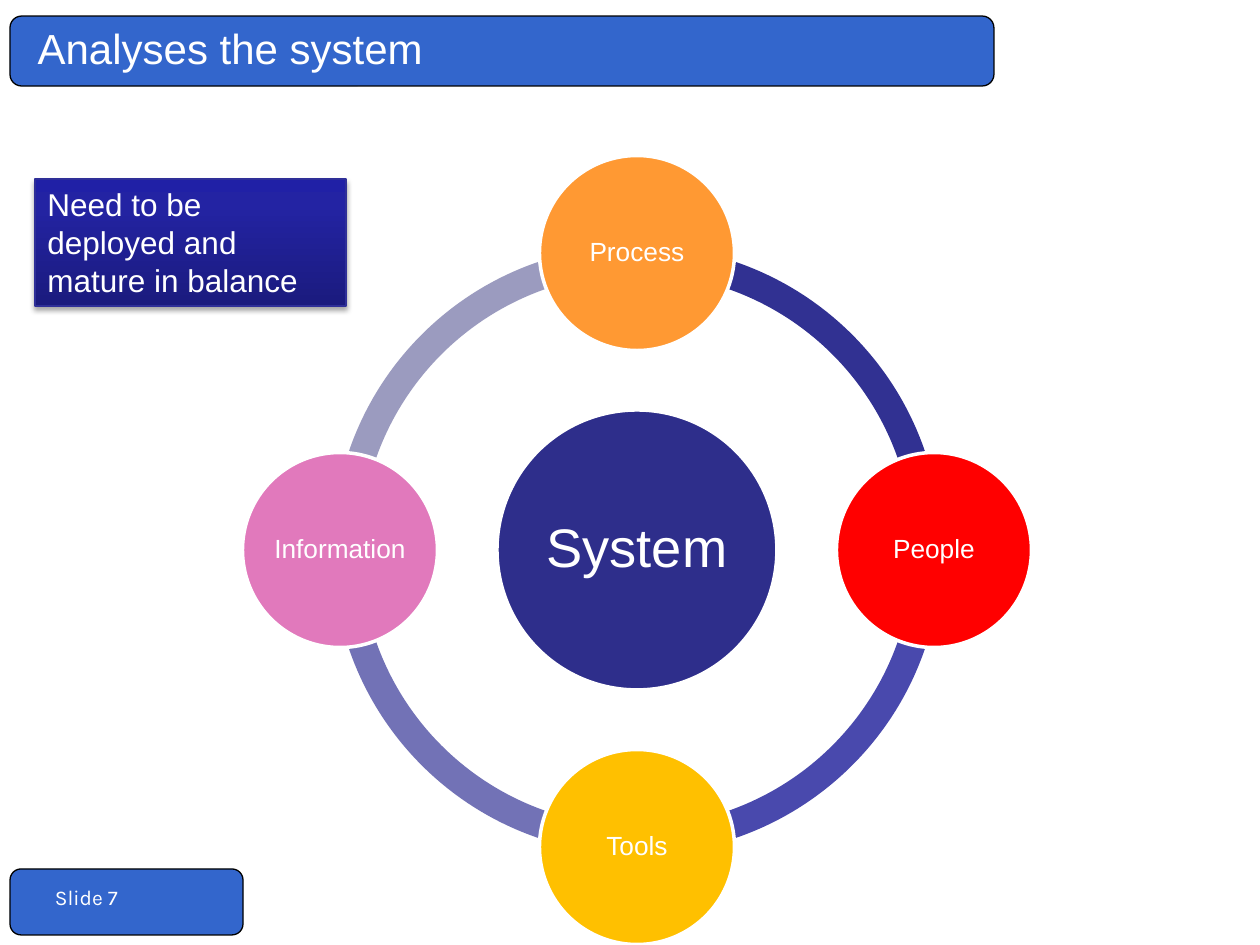
from copy import deepcopy

from lxml.etree import SubElement
from pptx import Presentation
from pptx.dml.color import RGBColor
from pptx.enum.shapes import MSO_SHAPE
from pptx.enum.text import MSO_ANCHOR, PP_ALIGN
from pptx.oxml.ns import qn
from pptx.util import Emu, Pt

EMU_PER_PX = 914400 // 126
WHITE, BAR_BLUE = "FFFFFF", "3366CC"
CENTRE_X, CENTRE_Y = 637, 550
ORBIT, RING_SIZE, NODE_SIZE, HUB_SIZE = 297, 609, 195, 280

# Label, colour, direction from the hub
NODES = [
    ("Process", "FF9933", (0, -1)),
    ("People", "FF0000", (1, 0)),
    ("Tools", "FFC000", (0, 1)),
    ("Information", "E179BC", (-1, 0)),
]
# Colour, start and end angle in degrees
ARCS = [
    ("9B9BBF", 180, 270),
    ("7272B6", 90, 180),
    ("4949AD", 0, 90),
    ("313192", 270, 0),
]


def px(n):
    return Emu(round(n * EMU_PER_PX))


def rgb(value):
    return RGBColor.from_string(value)


def add_run(p, text, size, font="Arial"):
    r = p.add_run()
    r.text = text
    r.font.size = Pt(size)
    r.font.name = font
    r.font.color.rgb = rgb(WHITE)


def add_box(s, kind, left, top, width, height, fill=None, line=None, weight=0.75):
    sp = s.shapes.add_shape(kind, px(left), px(top), px(width), px(height))
    sp.shadow.inherit = False
    if fill:
        sp.fill.solid()
        sp.fill.fore_color.rgb = rgb(fill)
    if line:
        sp.line.color.rgb = rgb(line)
        sp.line.width = Pt(weight)
    else:
        sp.line.fill.background()
    return sp


def add_title(s, text):
    title = s.shapes.title
    title.left, title.top, title.width, title.height = px(25), px(0), px(960), px(96)
    tf = title.text_frame
    tf.vertical_anchor = MSO_ANCHOR.MIDDLE
    p = tf.paragraphs[0]
    p.alignment = PP_ALIGN.LEFT
    add_run(p, text, 24)


def add_footer(s, text):
    box = s.shapes.add_textbox(px(0), px(869), px(174), px(47))
    tf = box.text_frame
    tf.word_wrap = True
    tf.margin_left = px(55)
    tf.vertical_anchor = MSO_ANCHOR.BOTTOM
    add_run(tf.paragraphs[0], text, 12, "Karla")


def add_arc(s, colour, start, end):
    half = RING_SIZE / 2
    sp = add_box(s, MSO_SHAPE.BLOCK_ARC, CENTRE_X - half, CENTRE_Y - half,
                 RING_SIZE, RING_SIZE, colour)
    # Angles count 60000ths of a degree, adjustments 100000ths
    for i, value in enumerate((start * 0.6, end * 0.6, 0.046)):
        sp.adjustments[i] = value


def add_circle(s, text, x, y, diameter, colour, size):
    """Draw a labelled circle centred on x, y."""
    sp = add_box(s, MSO_SHAPE.OVAL, x - diameter / 2, y - diameter / 2,
                 diameter, diameter, colour, WHITE, 2)
    tf = sp.text_frame
    tf.word_wrap = False
    tf.margin_left = tf.margin_right = tf.margin_top = tf.margin_bottom = px(3)
    tf.vertical_anchor = MSO_ANCHOR.MIDDLE
    p = tf.paragraphs[0]
    p.alignment = PP_ALIGN.CENTER
    p.line_spacing = 0.9
    add_run(p, text, size)


def fill_gradient(sp, stops, angle):
    sp.fill.gradient()
    sp.fill.gradient_angle = angle
    gs_list = next(sp.element.iter(qn("a:gsLst")))
    while len(gs_list) < len(stops):
        gs_list.append(deepcopy(gs_list[0]))
    for stop, (position, colour) in zip(sp.fill.gradient_stops, stops):
        stop.position = position
        stop.color.rgb = rgb(colour)


def add_drop_shadow(sp, blur, distance, opacity):
    effects = next(sp.element.iter(qn("a:effectLst")))
    shadow = SubElement(effects, qn("a:outerShdw"), blurRad=str(Pt(blur)),
                        dist=str(Pt(distance)), dir="5400000", rotWithShape="0")
    colour = SubElement(shadow, qn("a:srgbClr"), val="000000")
    SubElement(colour, qn("a:alpha"), val=str(opacity * 1000))


def add_callout(s, text):
    sp = add_box(s, MSO_SHAPE.RECTANGLE, 35, 179, 311, 127, line="2F2F98")
    fill_gradient(sp, [(0, "1B1B7E"), (0.8, "2323A3"), (1, "2020A6")], 90)
    add_drop_shadow(sp, 3.1, 1.8, 35)
    tf = sp.text_frame
    tf.word_wrap = True
    tf.vertical_anchor = MSO_ANCHOR.TOP
    p = tf.paragraphs[0]
    p.alignment = PP_ALIGN.LEFT
    add_run(p, text, 18)


def main():
    prs = Presentation()
    prs.slide_width, prs.slide_height = px(1260), px(945)
    s = prs.slides.add_slide(prs.slide_layouts[5])

    title_bar = add_box(s, MSO_SHAPE.ROUNDED_RECTANGLE, 10, 16, 984, 70, BAR_BLUE, "000000")
    s.shapes.title.element.addprevious(title_bar.element)
    add_title(s, "Analyses the system")
    add_box(s, MSO_SHAPE.ROUNDED_RECTANGLE, 10, 869, 233, 66, BAR_BLUE, "000000")
    add_footer(s, "Slide 7")

    for arc in ARCS:
        add_arc(s, *arc)
    add_circle(s, "System", CENTRE_X, CENTRE_Y, HUB_SIZE, "2E2E8B", 31)
    for label, colour, (dx, dy) in NODES:
        add_circle(s, label, CENTRE_X + dx * ORBIT, CENTRE_Y + dy * ORBIT,
                   NODE_SIZE, colour, 15)
    add_callout(s, "Need to be deployed and mature in balance")

    prs.save("out.pptx")


if __name__ == "__main__":
    main()
